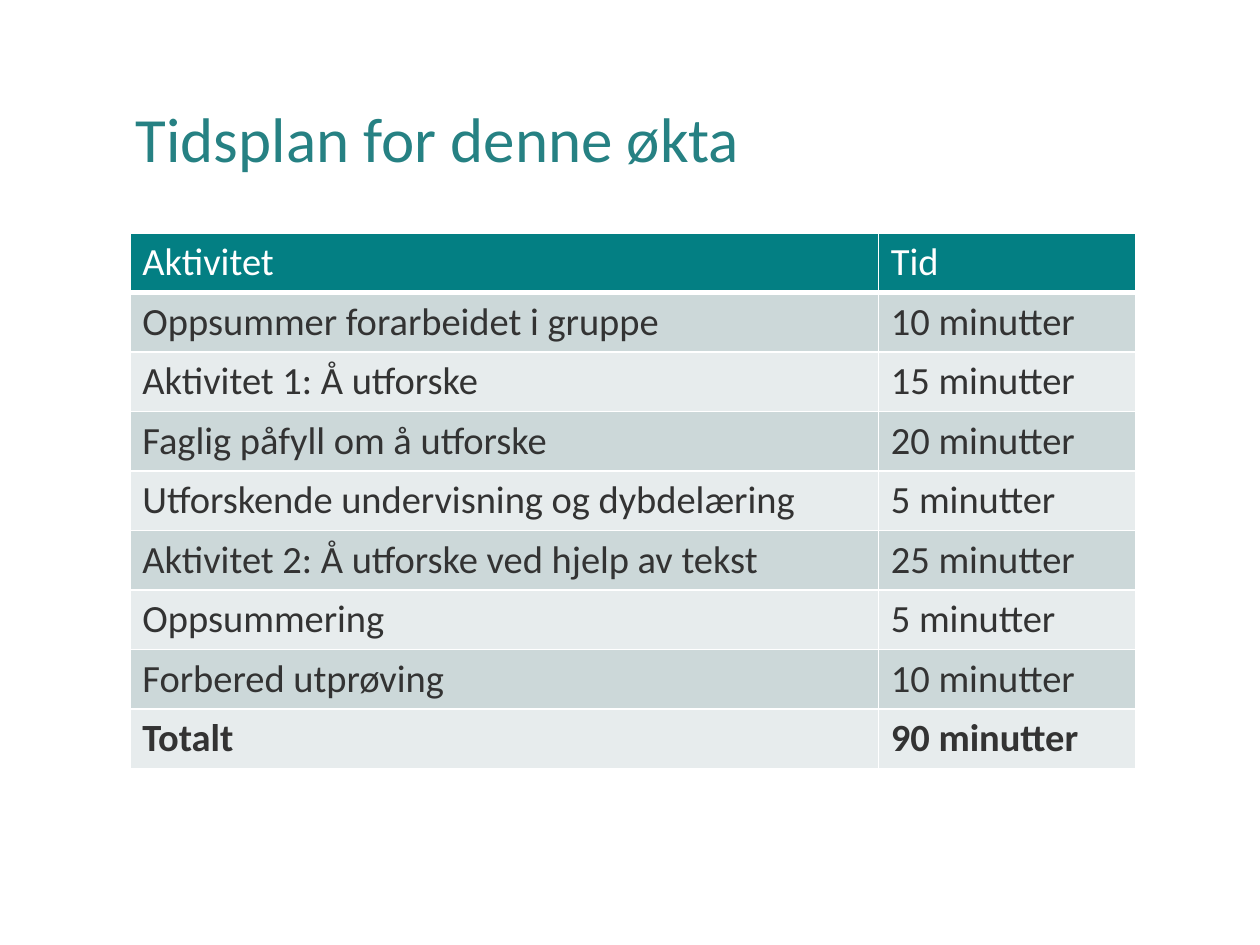
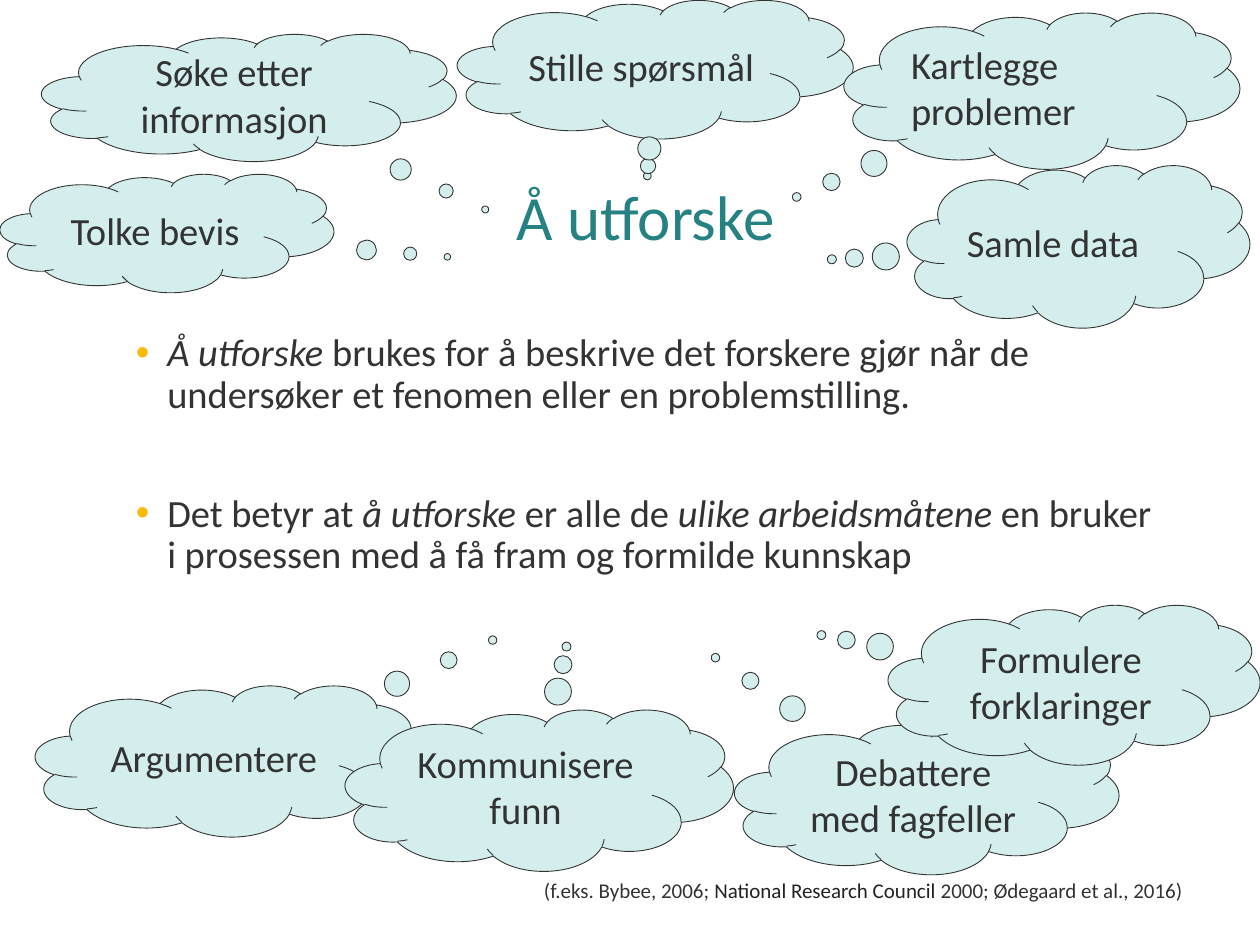
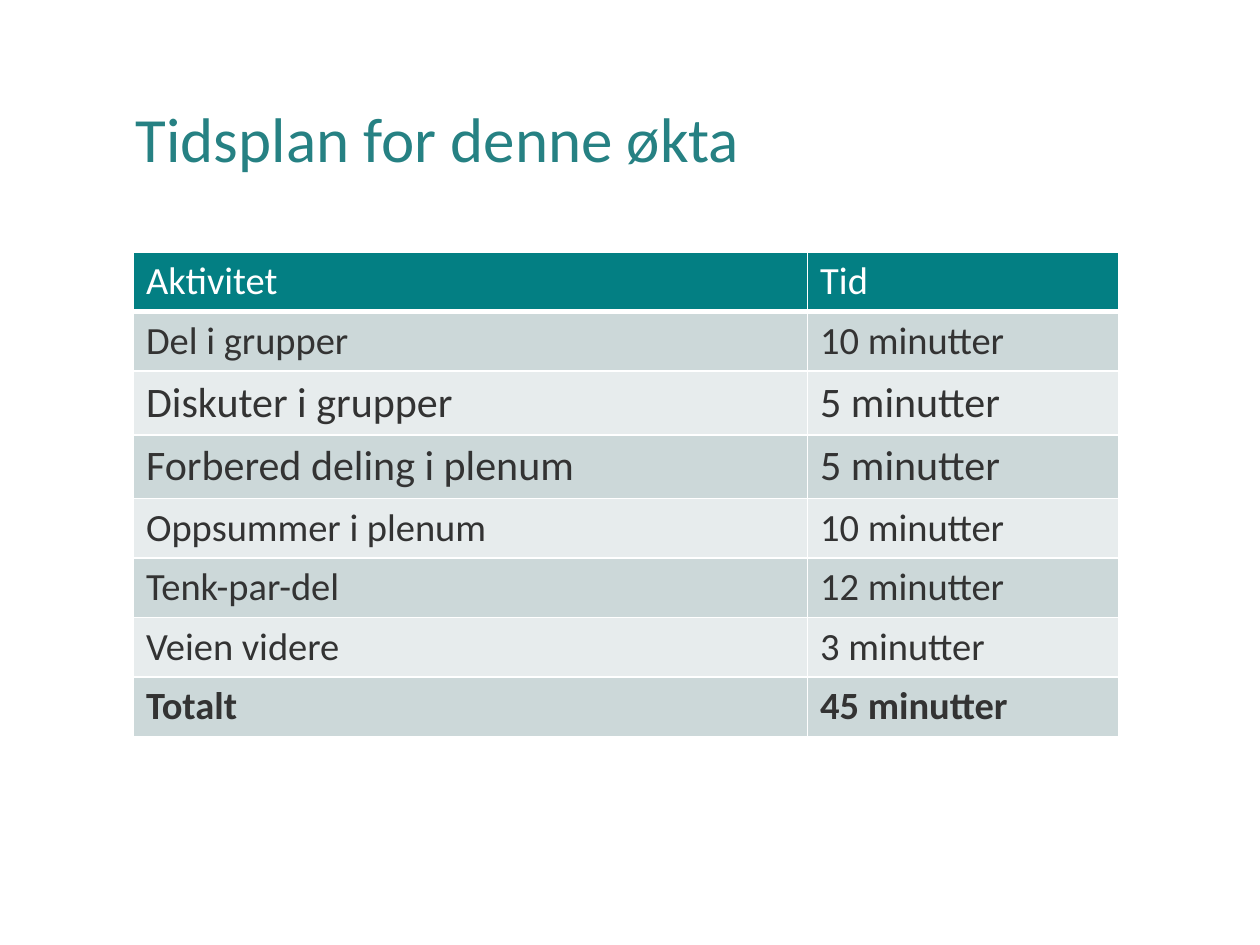
"""Build three slides: two session timetables and an overview of inquiry practices."""
import dataclasses

import lxml.etree
import pptx
import pptx.dml.color
import pptx.enum.shapes
import pptx.enum.text
import pptx.oxml.ns
import pptx.util

Pt = pptx.util.Pt
RGB = pptx.dml.color.RGBColor.from_string
ALIGN = pptx.enum.text.PP_ALIGN
ANCHOR = pptx.enum.text.MSO_ANCHOR


@dataclasses.dataclass(frozen=True)
class Theme:
    font: str = "Calibri"
    title: str = "268183"
    text: str = "333333"
    council: str = "222222"
    white: str = "FFFFFF"
    header: str = "037F83"
    bands: tuple = ("CCD8D9", "E7ECED")
    cloud: str = "D4EEEE"
    bullet: str = "FDB90C"
    title_size: float = 36
    large_size: float = 24
    body_size: float = 22
    source_size: float = 12


THEME = Theme()
SLIDE_SIZE = (720, 540)
LEFT, CONTENT_WIDTH, TITLE_HEIGHT = 70.5, 597, 104.5
ROW_HEIGHTS = {THEME.body_size: 34, THEME.large_size: 36.5}

SCHEDULE_TITLE = "Tidsplan for denne økta"
HEADINGS = ("Aktivitet", "Tid")
FIRST_SCHEDULE = {
    "place": (74.2, 133.2),
    "columns": (427.7, 146.9),
    "rows": [
        ("Oppsummer forarbeidet i gruppe", "10 minutter"),
        ("Aktivitet 1: Å utforske", "15 minutter"),
        ("Faglig påfyll om å utforske", "20 minutter"),
        ("Utforskende undervisning og dybdelæring", "5 minutter"),
        ("Aktivitet 2: Å utforske ved hjelp av tekst", "25 minutter"),
        ("Oppsummering", "5 minutter"),
        ("Forbered utprøving", "10 minutter"),
        ("Totalt", "90 minutter"),
    ],
    "large": (),
}
SECOND_SCHEDULE = {
    "place": (76.3, 144),
    "columns": (385.2, 177.8),
    "rows": [
        ("Del i grupper", "10 minutter"),
        ("Diskuter i grupper", "5 minutter"),
        ("Forbered deling i plenum", "5 minutter"),
        ("Oppsummer i plenum", "10 minutter"),
        ("Tenk-par-del", "12 minutter"),
        ("Veien videre", "3 minutter"),
        ("Totalt", "45 minutter"),
    ],
    "large": (2, 3),
}

INQUIRY_TITLE = "Å utforske"
ITALIC = {"italic": True}
INQUIRY_POINTS = [
    [
        ("Å utforske ", ITALIC),
        ("brukes for å beskrive det forskere gjør når de undersøker "
         "et fenomen eller en problemstilling.", {}),
    ],
    [
        ("Det betyr at ", {}),
        ("å utforske ", ITALIC),
        ("er alle de ", {}),
        ("ulike arbeidsmåtene", ITALIC),
        (" en bruker i prosessen med å få fram og formilde kunnskap", {}),
    ],
]
SOURCES = [[
    ("(f.eks. Bybee, 2006; ", {}),
    ("National Research Council ", {"color": THEME.council}),
    ("2000; Ødegaard et al., 2016)", {}),
]]
CLOUDS = [
    ("Stille spørsmål", (261.4, 0, 226.1, 79.2), (-0.02, 0.77), ALIGN.CENTER),
    ("Debattere med fagfeller", (419.8, 411.8, 219.6, 87.8), (-0.55, -0.91), ALIGN.CENTER),
    ("Formulere forklaringer", (507.6, 345.6, 212.4, 91.4), (-0.68, -0.31), ALIGN.CENTER),
    ("Tolke bevis", (0, 99.4, 190.8, 67.7), (0.84, 0.2), ALIGN.CENTER),
    ("Samle data", (518.4, 94.3, 195.8, 92.9), (-0.72, 0.08), ALIGN.LEFT),
    ("Søke etter informasjon", (23.8, 19.4, 236.9, 72.7), (0.57, 0.88), ALIGN.CENTER),
    ("Kartlegge problemer", (482.4, 7.2, 226.1, 89.3), (-0.62, 0.68), ALIGN.LEFT),
    ("Argumentere", (20.2, 391.7, 219.6, 86.4), (0.69, -0.8), ALIGN.CENTER),
    ("Kommunisere funn", (197.3, 405.4, 221.8, 92.2), (0.07, -0.89), ALIGN.CENTER),
]


def points(values):
    return [Pt(value) for value in values]


def add_element(parent, tag, **attributes):
    return lxml.etree.SubElement(parent, pptx.oxml.ns.qn(tag), attributes)


def add_bullet(para):
    properties = para._p.get_or_add_pPr()
    properties.set("marL", str(Pt(18)))
    properties.set("indent", str(Pt(-18)))
    add_element(add_element(properties, "a:buClr"), "a:srgbClr", val=THEME.bullet)
    add_element(properties, "a:buFont", typeface="Arial")
    add_element(properties, "a:buChar", char="•")


def write_text(frame, text, *, size=THEME.body_size, color=THEME.text, bold=False,
               align=ALIGN.LEFT, anchor=ANCHOR.TOP, spacing=None, gap=0, bullet=False):
    frame.word_wrap = True
    frame.vertical_anchor = anchor
    paragraphs = [[(text, {})]] if isinstance(text, str) else text
    for index, spans in enumerate(paragraphs):
        para = frame.add_paragraph() if index else frame.paragraphs[0]
        if bullet:
            add_bullet(para)
        para.alignment = align
        if spacing:
            para.line_spacing = spacing
        if index:
            para.space_before = Pt(gap)
        for words, changes in spans:
            span = para.add_run()
            span.text = words
            span.font.name = THEME.font
            span.font.size = Pt(size)
            span.font.bold = bold
            span.font.italic = changes.get("italic", False)
            span.font.color.rgb = RGB(changes.get("color", color))


def add_text(page, place, text, **format):
    box = page.shapes.add_textbox(*points(place))
    write_text(box.text_frame, text, **format)


def add_title(page, text, top=28.8, align=ALIGN.LEFT):
    add_text(page, (LEFT, top, CONTENT_WIDTH, TITLE_HEIGHT), text, size=THEME.title_size,
             color=THEME.title, align=align, anchor=ANCHOR.MIDDLE, spacing=0.9)


def add_borders(cell, widths):
    properties = cell._tc.get_or_add_tcPr()
    for side, width in widths.items():
        line = add_element(properties, f"a:ln{side}", w=str(Pt(width)))
        add_element(add_element(line, "a:solidFill"), "a:srgbClr", val=THEME.white)


def add_schedule(page, schedule):
    rows = [HEADINGS, *schedule["rows"]]
    sizes = [THEME.large_size if index in schedule["large"] else THEME.body_size
             for index in range(len(rows))]
    heights = [ROW_HEIGHTS[size] for size in sizes]
    widths = schedule["columns"]
    place = (*schedule["place"], sum(widths), sum(heights))
    table = page.shapes.add_table(len(rows), len(widths), *points(place)).table
    for column, width in zip(table.columns, widths):
        column.width = Pt(width)
    for index, words in enumerate(rows):
        table.rows[index].height = Pt(heights[index])
        heading = index == 0
        fill = THEME.header if heading else THEME.bands[(index - 1) % 2]
        for cell, text in zip(table.rows[index].cells, words):
            add_borders(cell, {"L": 1, "R": 1, "T": 3 if index == 1 else 1,
                               "B": 3 if heading else 1})
            cell.fill.solid()
            cell.fill.fore_color.rgb = RGB(fill)
            write_text(cell.text_frame, text, size=sizes[index],
                       color=THEME.white if heading else THEME.text,
                       bold=index == len(rows) - 1)


def add_cloud(page, text, place, tail, align):
    cloud = page.shapes.add_shape(
        pptx.enum.shapes.MSO_SHAPE.CLOUD_CALLOUT, *points(place))
    cloud.adjustments[0], cloud.adjustments[1] = tail
    cloud.shadow.inherit = False
    cloud.fill.solid()
    cloud.fill.fore_color.rgb = RGB(THEME.cloud)
    cloud.line.color.rgb = RGB(THEME.text)
    cloud.line.width = Pt(0.5)
    write_text(cloud.text_frame, text, align=align, anchor=ANCHOR.MIDDLE)


def add_page(deck):
    return deck.slides.add_slide(deck.slide_layouts[6])


def add_schedule_page(deck, schedule):
    page = add_page(deck)
    add_title(page, SCHEDULE_TITLE)
    add_schedule(page, schedule)


def add_inquiry_page(deck):
    page = add_page(deck)
    add_title(page, INQUIRY_TITLE, top=73.4, align=ALIGN.CENTER)
    add_text(page, (LEFT, 187.2, CONTENT_WIDTH, 247.7), INQUIRY_POINTS,
             spacing=0.9, gap=44, bullet=True)
    for cloud in CLOUDS:
        add_cloud(page, *cloud)
    add_text(page, (303.8, 498.2, 410.4, 21.6), SOURCES, size=THEME.source_size)


def main():
    deck = pptx.Presentation()
    deck.slide_width, deck.slide_height = points(SLIDE_SIZE)
    add_schedule_page(deck, FIRST_SCHEDULE)
    add_inquiry_page(deck)
    add_schedule_page(deck, SECOND_SCHEDULE)
    deck.save("out.pptx")


if __name__ == "__main__":
    main()
